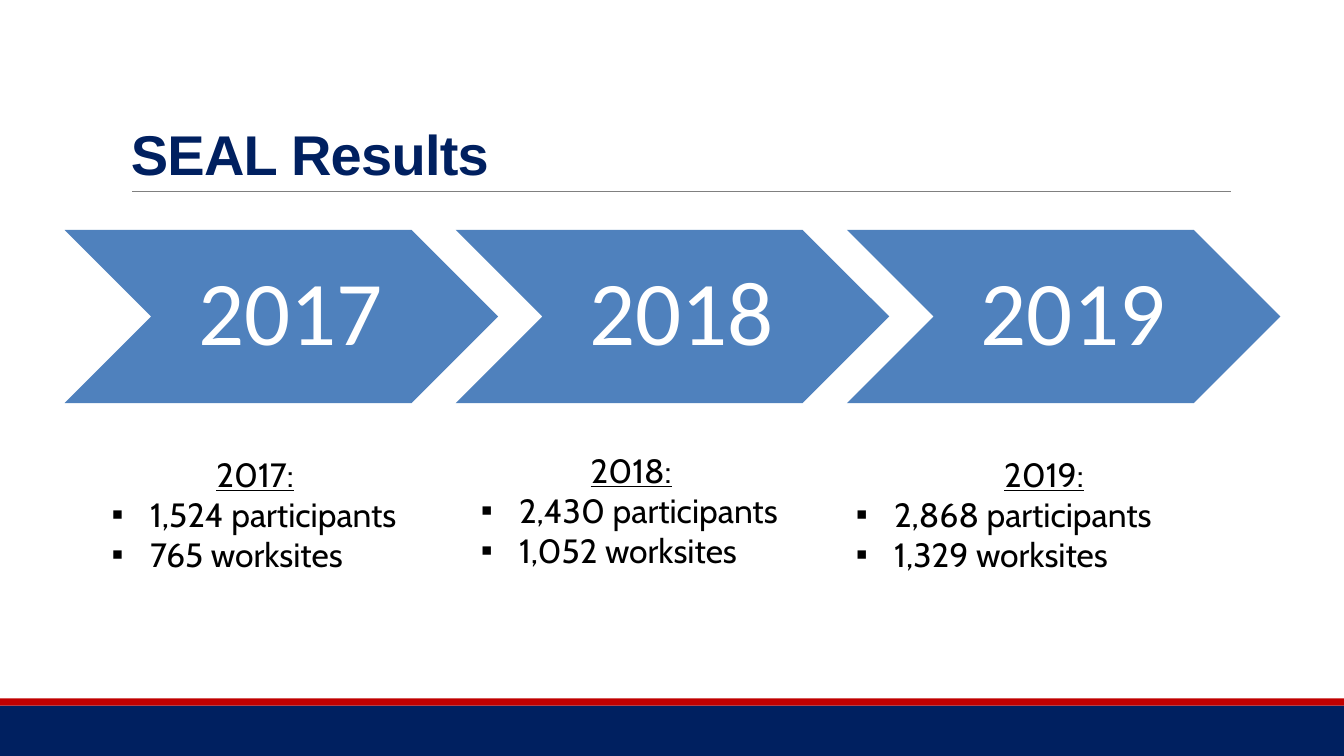
from lxml.etree import SubElement
from pptx import Presentation
from pptx.dml.color import RGBColor
from pptx.enum.shapes import MSO_CONNECTOR as Connector, MSO_SHAPE as Shape
from pptx.enum.text import MSO_ANCHOR as Anchor, PP_ALIGN as Align
from pptx.oxml.ns import qn
from pptx.util import Inches, Pt

NAVY, RED, BLUE, GREY = "002060", "C00000", "4F81BD", "808080"
WHITE, BLACK = "FFFFFF", "000000"
TITLE = {"name": "Arial", "size": Pt(40), "bold": True}
YEAR = {"name": "Calibri", "size": Pt(65)}
BODY = {"name": "Cabin", "size": Pt(24)}

RESULTS = [
    ("2017", ["1,524 participants", "765 worksites"], (1.01, 4.45, 3.04, 1.31)),
    ("2018", ["2,430 participants", "1,052 worksites"], (4.67, 4.41, 3.18, 1.31)),
    ("2019", ["2,868 participants", "1,329 worksites"], (8.39, 4.45, 3.93, 1.31)),
]


def color(value):
    return RGBColor.from_string(value)


def set_format(target, values):
    for name, value in values.items():
        setattr(target, name, value)


def add_span(para, text, font, fill):
    span = para.add_run()
    span.text = text
    set_format(span.font, font)
    span.font.color.rgb = color(fill)
    return span


def add_block(page, kind, box, fill):
    block = page.shapes.add_shape(kind, *map(Inches, box))
    block.shadow.inherit = False
    block.fill.solid()
    block.fill.fore_color.rgb = color(fill)
    block.line.fill.background()
    return block


def add_text_frame(page, box):
    frame = page.shapes.add_textbox(*map(Inches, box)).text_frame
    frame.word_wrap = True
    return frame


def add_footer(page, box):
    left, top, width, height = box
    stripe = 0.07
    add_block(page, Shape.RECTANGLE, (left, top + stripe, width, height - stripe), NAVY)
    add_block(page, Shape.RECTANGLE, (left, top, width, stripe), RED)


def add_title(page, box, text):
    left, top, width, height = box
    bottom = Inches(top + height)
    rule = page.shapes.add_connector(
        Connector.STRAIGHT, Inches(left + 0.11), bottom, Inches(left + width + 0.01), bottom)
    rule.line.color.rgb = color(GREY)
    rule.line.width = Pt(0.5)
    SubElement(rule._element.spPr, qn("a:effectLst"))

    frame = add_text_frame(page, box)
    frame.vertical_anchor = Anchor.BOTTOM
    para = frame.paragraphs[0]
    para.line_spacing = 0.85
    span = add_span(para, text, TITLE, NAVY)
    span.font._element.set("spc", "-50")


def add_timeline(page, box, years):
    left, top, width, height = box
    chevron_width = height * 2.5
    step = (width - chevron_width) / (len(years) - 1)
    for index, year in enumerate(years):
        chevron = add_block(
            page, Shape.CHEVRON, (left + index * step, top, chevron_width, height), BLUE)
        frame = chevron.text_frame
        set_format(frame, {"margin_left": Inches(0.28), "margin_right": Inches(0.09),
                           "margin_top": Inches(0.09), "margin_bottom": Inches(0.09),
                           "vertical_anchor": Anchor.MIDDLE, "word_wrap": True})
        para = frame.paragraphs[0]
        set_format(para, {"alignment": Align.CENTER, "line_spacing": 0.9})
        add_span(para, year, YEAR, WHITE)


def add_result(page, box, year, facts):
    frame = add_text_frame(page, box)
    heading = frame.paragraphs[0]
    heading.alignment = Align.CENTER
    add_span(heading, f"{year}:", {**BODY, "underline": True}, BLACK)
    for fact in facts:
        para = frame.add_paragraph()
        add_span(para, fact, BODY, BLACK)
        properties = para._p.get_or_add_pPr()
        properties.set("marL", str(Inches(0.38)))
        properties.set("indent", str(-Inches(0.38)))
        SubElement(properties, qn("a:buFont"), typeface="Arial")
        SubElement(properties, qn("a:buChar"), char="▪")


def main():
    deck = Presentation()
    set_format(deck, {"slide_width": Inches(13.33), "slide_height": Inches(7.5)})
    page = deck.slides.add_slide(deck.slide_layouts[6])
    add_footer(page, (0, 6.93, 13.33, 0.57))
    add_title(page, (1.2, 0.31, 11, 1.59), "SEAL Results")
    add_timeline(page, (0.64, 2.28, 12.06, 1.72), [year for year, _, _ in RESULTS])
    for year, facts, box in RESULTS:
        add_result(page, box, year, facts)
    deck.save("out.pptx")


if __name__ == "__main__":
    main()
